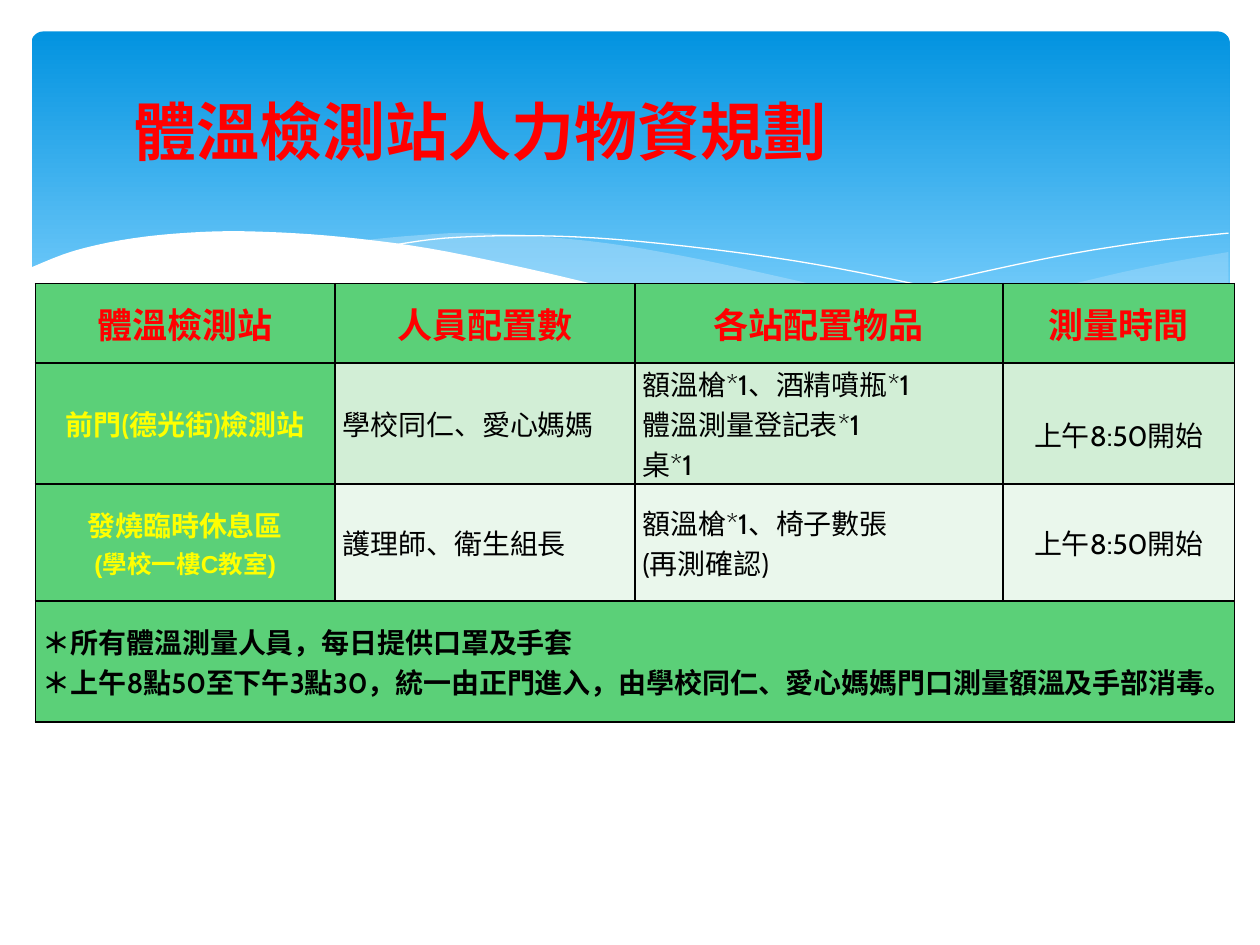
from lxml.etree import SubElement
from pptx import Presentation
from pptx.dml.color import RGBColor
from pptx.enum.shapes import MSO_SHAPE as Shape
from pptx.enum.text import MSO_ANCHOR as Anchor, MSO_AUTO_SIZE as AutoSize, PP_ALIGN as Align
from pptx.oxml import parse_xml
from pptx.oxml.ns import nsdecls, qn
from pptx.util import Inches, Pt

RED, YELLOW, BLACK, WHITE = "FF0000", "FFFF00", "000000", "FFFFFF"
GREEN, MINT, PALE, SKY = "5BD078", "D2EED6", "EAF7EC", "C6E7FC"
ASIAN_FONT = "Noto Sans CJK TC"
CURVE_STEPS = 5

# Wave edges, measured from the top left corner of the banner
RIGHT_CREST = [(9.5, 1.75), (9.1, 1.82), (8.66, 1.91), (8.07, 2.05),
               (7.28, 2.23), (6.36, 2.4)]
RIGHT_TROUGH = [(6.36, 2.4), (6.94, 2.47), (7.56, 2.52), (8.1, 2.52),
                (8.64, 2.47), (9.1, 2.37), (9.5, 2.22)]
MIDDLE_CREST = [(8.68, 2.48), (7.82, 2.35), (6.81, 2.15), (6.04, 1.97),
                (5.16, 1.78), (4.4, 1.66), (3.55, 1.6), (3.03, 1.62), (2.61, 1.66)]
MIDDLE_TROUGH = [(2.61, 1.66), (3.37, 1.78), (4.24, 1.97), (5.05, 2.15),
                 (5.93, 2.33), (6.84, 2.47), (7.6, 2.53), (8.23, 2.52), (8.68, 2.48)]
FALLING_LINE = [(2.84, 1.7), (3.28, 1.64), (3.91, 1.62), (4.64, 1.65), (5.57, 1.75),
                (6.4, 1.88), (7.35, 2.08), (8.06, 2.26), (8.82, 2.47)]
RISING_LINE = [(5.88, 2.32), (6.47, 2.16), (7.23, 1.98), (8.11, 1.79),
               (8.85, 1.67), (9.5, 1.6)]
WHITE_CREST = [(9.52, 2.21), (9.05, 2.37), (8.5, 2.48), (7.84, 2.52), (7.01, 2.47),
               (6.23, 2.37), (5.54, 2.25), (4.78, 2.08), (3.93, 1.88), (3.15, 1.72),
               (2.46, 1.63), (1.86, 1.59), (1.36, 1.59), (0.81, 1.64),
               (0.34, 1.74), (-0.02, 1.88)]
WHITE_BASE = [(-0.02, 3.04), (9.52, 3.04)]


def color(hex_text):
    return RGBColor.from_string(hex_text)


def smooth(points):
    """Catmull-Rom curve through the points."""
    ends = [points[0], *points, points[-1]]
    curve = [points[0]]
    for a, b, c, d in zip(ends, ends[1:], ends[2:], ends[3:]):
        for step in range(1, CURVE_STEPS + 1):
            t = step / CURVE_STEPS
            curve.append(tuple(
                q + t * (r - p) / 2 + t**2 * (2 * p - 5 * q + 4 * r - s) / 2
                + t**3 * (3 * q - p - 3 * r + s) / 2
                for p, q, r, s in zip(a, b, c, d)))
    return curve


def add_wave(page, left, top, points, fill=None, opacity=100, line=None):
    places = [(left + Inches(x), top + Inches(y)) for x, y in points]
    builder = page.shapes.build_freeform(*places[0])
    builder.add_line_segments(places[1:], close=fill is not None)
    wave = builder.convert_to_shape()
    wave.shadow.inherit = False
    if fill:
        wave.fill.solid()
        wave.fill.fore_color.rgb = color(fill)
        if opacity < 100:
            tint = wave.fill._xPr.find(".//" + qn("a:srgbClr"))
            SubElement(tint, qn("a:alpha"), val=str(opacity * 1000))
    else:
        wave.fill.background()
    if line:
        wave.line.color.rgb = color(line)
        wave.line.width = Pt(0)
    else:
        wave.line.fill.background()


def add_banner(page, left, top, width, height):
    banner = page.shapes.add_shape(Shape.ROUNDED_RECTANGLE, left, top, width, height)
    banner.adjustments[0] = 0.034
    banner.shadow.inherit = False
    banner.line.fill.background()
    banner.fill.gradient()
    banner.fill.gradient_angle = 270
    for stop, place, shade in zip(banner.fill.gradient_stops, (0, 0.9), ("0293E0", "83D3FE")):
        stop.position = place
        stop.color.rgb = color(shade)
    add_wave(page, left, top, smooth(RIGHT_CREST) + smooth(RIGHT_TROUGH), SKY, 29)
    add_wave(page, left, top, smooth(MIDDLE_CREST) + smooth(MIDDLE_TROUGH), SKY, 40)
    for points in (FALLING_LINE, RISING_LINE):
        add_wave(page, left, top, smooth(points), line=WHITE)
    add_wave(page, left, top, smooth(WHITE_CREST) + WHITE_BASE, WHITE)


def write(frame, text, size=16, font="Cabin", ink=BLACK, bold=False, align=Align.LEFT,
          first=True):
    """Write each line of text as a paragraph; first=False adds below what is there."""
    for number, line in enumerate(text.split("\n")):
        para = frame.paragraphs[0] if first and number == 0 else frame.add_paragraph()
        para.alignment = align
        span = para.add_run()
        span.text = line
        span.font.size = Pt(size)
        span.font.bold = bold
        span.font.name = font
        span.font.color.rgb = color(ink)
        SubElement(span.font._element, qn("a:ea"), typeface=ASIAN_FONT)


def add_title(page, left, top, width, height):
    box = page.shapes.add_textbox(left, top, width, height)
    frame = box.text_frame
    frame.word_wrap = True
    frame.auto_size = AutoSize.SHAPE_TO_FIT_TEXT
    frame.vertical_anchor = Anchor.MIDDLE
    write(frame, "體溫檢測站人力物資規劃", size=36, font="Arial", ink=RED, bold=True,
          align=Align.JUSTIFY)


def style_cell(cell, fill):
    cell.fill.solid()
    cell.fill.fore_color.rgb = color(fill)
    cell.vertical_anchor = Anchor.MIDDLE
    cell.margin_left = cell.margin_right = Inches(0.06)
    cell.margin_top = cell.margin_bottom = 0
    properties = cell._tc.get_or_add_tcPr()
    for place, side in enumerate("LRTB"):
        properties.insert(place, parse_xml(
            f'<a:ln{side} {nsdecls("a")} w="{Pt(1)}"><a:solidFill>'
            f'<a:srgbClr val="{BLACK}"/></a:solidFill></a:ln{side}>'))


def add_plan_table(page, left, top, width, height):
    columns, rows = (2.38, 2.38, 2.92, 1.84), (0.63, 0.96, 0.93, 0.7)
    table = page.shapes.add_table(len(rows), len(columns), left, top, width, height).table
    table.first_row = table.horz_banding = False
    for column, size in zip(table.columns, columns):
        column.width = Inches(size)
    for row, size in zip(table.rows, rows):
        row.height = Inches(size)
    for number, body_fill in enumerate((GREEN, MINT, PALE, GREEN)):
        for place, cell in enumerate(table.rows[number].cells):
            style_cell(cell, GREEN if place == 0 else body_fill)

    headings = ("體溫檢測站", "人員配置數", "各站配置物品", "測量時間")
    for place, heading in enumerate(headings):
        write(table.cell(0, place).text_frame, heading, size=20, ink=RED, bold=True,
              align=Align.CENTER)

    station = {"ink": YELLOW, "bold": True, "align": Align.CENTER}
    write(table.cell(1, 0).text_frame, "前門(德光街)檢測站", **station)
    rest_area = table.cell(2, 0).text_frame
    write(rest_area, "發燒臨時休息區", **station)
    write(rest_area, "(學校一樓C教室)", size=14, font="Arial", first=False, **station)

    write(table.cell(1, 1).text_frame, "學校同仁、愛心媽媽", font="Arial")
    write(table.cell(2, 1).text_frame, "護理師、衛生組長")
    write(table.cell(1, 2).text_frame, "額溫槍*1、酒精噴瓶*1\n體溫測量登記表*1\n桌*1")
    write(table.cell(2, 2).text_frame, "額溫槍*1、椅子數張\n(再測確認)")
    for number in (1, 2):
        write(table.cell(number, 3).text_frame, "上午8:50開始", align=Align.CENTER)
    table.cell(1, 3).margin_top = Inches(0.18)

    notes = table.cell(3, 0)
    notes.merge(table.cell(3, len(columns) - 1))
    write(notes.text_frame,
          "＊所有體溫測量人員，每日提供口罩及手套\n"
          "＊上午8點50至下午3點30，統一由正門進入，由學校同仁、愛心媽媽門口測量額溫及手部消毒。",
          bold=True)


def main():
    deck = Presentation()
    deck.slide_width, deck.slide_height = Inches(10), Inches(7.5)
    page = deck.slides.add_slide(deck.slide_layouts[6])
    add_banner(page, Inches(0.25), Inches(0.25), Inches(9.51), Inches(2.7))
    add_plan_table(page, Inches(0.28), Inches(2.25), Inches(9.53), Inches(3.22))
    add_title(page, Inches(0.96), Inches(0.68), Inches(8.22), Inches(0.71))
    deck.save("out.pptx")


if __name__ == "__main__":
    main()
